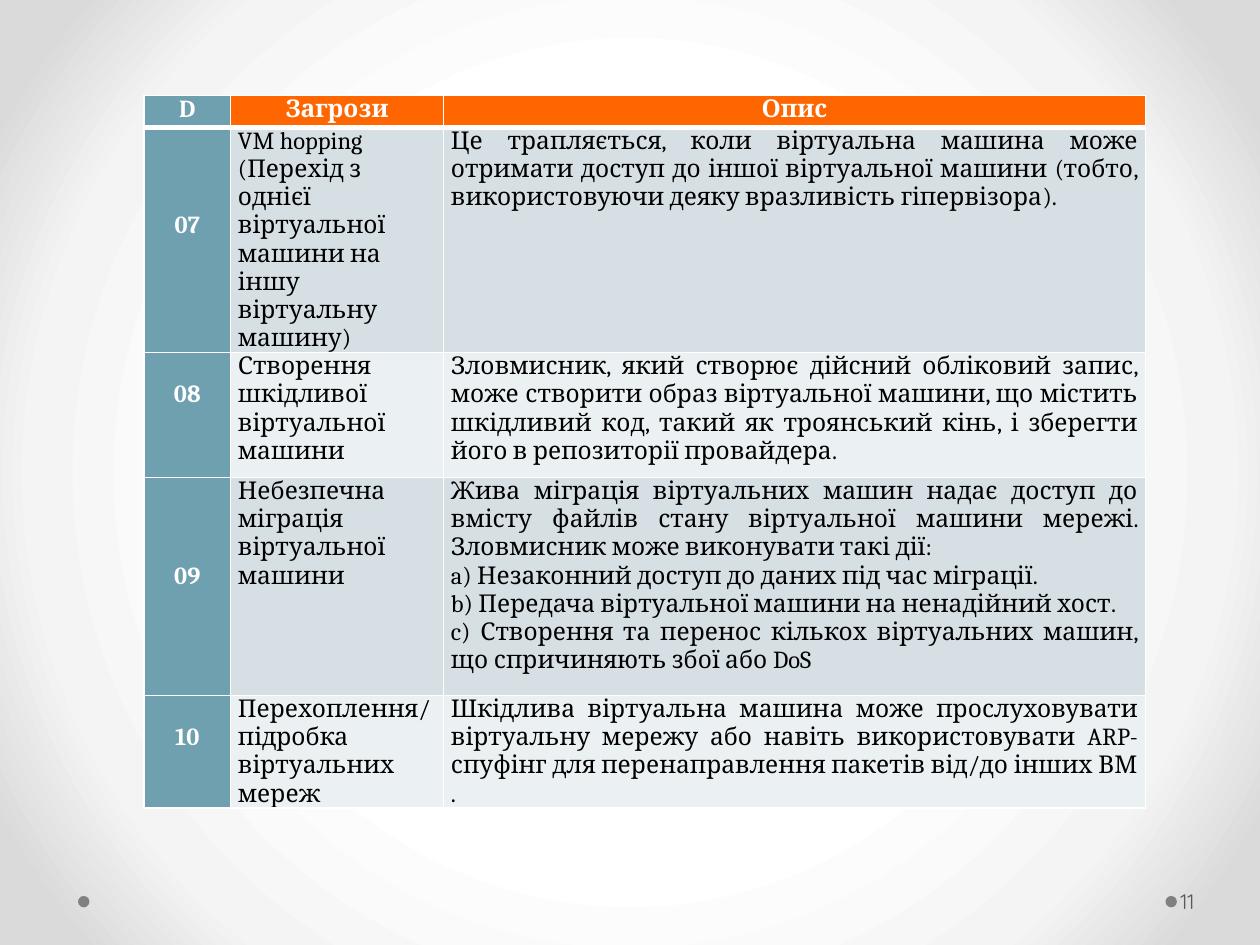
import pptx
import pptx.util
import pptx.dml.color
import pptx.enum.shapes
import pptx.enum.text
import pptx.oxml
import pptx.oxml.ns

Pt = pptx.util.Pt
RGB = pptx.dml.color.RGBColor
ALIGN = pptx.enum.text.PP_ALIGN

WHITE = RGB(0xFF, 0xFF, 0xFF)
BLACK = RGB(0, 0, 0)
TEAL = RGB(0x6E, 0xA0, 0xB0)
ORANGE = RGB(0xFF, 0x66, 0x00)
BAND_DARK = RGB(0xD5, 0xDF, 0xE4)
BAND_LIGHT = RGB(0xEB, 0xF0, 0xF2)
DOT_GREY = RGB(0x80, 0x80, 0x80)
NUMBER_GREY = RGB(0x59, 0x59, 0x59)
BACKGROUND_STOPS = [(50, WHITE), (76, RGB(0xF4, 0xF4, 0xF4)), (92, RGB(0xDA, 0xDA, 0xDA))]

HEADERS = ["D", "Загрози", "Опис"]
# number, lines the number is lowered by, threat, threat alignment, description
THREATS = [
    ("07", 3,
     "VM hopping (Перехід з однієї віртуальної машини на іншу віртуальну машину)", ALIGN.LEFT,
     "Це трапляється, коли віртуальна машина може отримати доступ до іншої віртуальної машини "
     "(тобто, використовуючи деяку вразливість гіпервізора)."),
    ("08", 1,
     "Створення шкідливої\nвіртуальної машини", ALIGN.LEFT,
     "Зловмисник, який створює дійсний обліковий запис, може створити образ віртуальної машини, "
     "що містить шкідливий код, такий як троянський кінь, і зберегти його в репозиторії провайдера."),
    ("09", 3,
     "Небезпечна міграція віртуальної машини", ALIGN.JUSTIFY,
     "Жива міграція віртуальних машин надає доступ до вмісту файлів стану віртуальної машини "
     "мережі. Зловмисник може виконувати такі дії:\n"
     "a) Незаконний доступ до даних під час міграції.\n"
     "b) Передача віртуальної машини на ненадійний хост.\n"
     "c) Створення та перенос кількох віртуальних машин, що спричиняють збої або DoS"),
    ("10", 1,
     "Перехоплення/підробка віртуальних мереж", ALIGN.JUSTIFY,
     "Шкідлива віртуальна машина може прослуховувати віртуальну мережу або навіть "
     "використовувати ARP-спуфінг для перенаправлення пакетів від/до інших ВМ ."),
]
COLUMN_WIDTHS = [49.5, 121.7, 401]
ROW_HEIGHTS = [18, 126, 71.3, 124.6, 62.6]
TABLE_LEFT, TABLE_TOP = 82.3, 54.7
LINE_HEIGHT = 16.1
DOT_SIZE = 6.5
DOT_TOP = 512
DOT_LEFTS = [666, 44.6]


def paint_background(slide):
    """Radial gradient from the centre of the slide outwards."""
    fill = slide.background.fill
    fill.gradient()
    stops = "".join(f'<a:gs pos="{place * 1000}"><a:srgbClr val="{color}"/></a:gs>'
                    for place, color in BACKGROUND_STOPS)
    radial = pptx.oxml.parse_xml(
        f'<a:gradFill {pptx.oxml.ns.nsdecls("a")} rotWithShape="1"><a:gsLst>{stops}</a:gsLst>'
        '<a:path path="circle"><a:fillToRect l="50000" t="50000" r="50000" b="50000"/></a:path>'
        '</a:gradFill>')
    linear = slide._element.find(".//" + pptx.oxml.ns.qn("a:gradFill"))
    linear.getparent().replace(linear, radial)


def set_borders(cell, top, bottom):
    widths = {"lnL": 1, "lnR": 1, "lnT": top, "lnB": bottom}
    properties = cell._tc.get_or_add_tcPr()
    for place, (side, width) in enumerate(widths.items()):
        properties.insert(place, pptx.oxml.parse_xml(
            f'<a:{side} {pptx.oxml.ns.nsdecls("a")} w="{Pt(width)}"><a:solidFill>'
            f'<a:srgbClr val="{WHITE}"/></a:solidFill></a:{side}>'))


def fill_cell(cell, text, fill, color, align, bold=False, lowered=0):
    cell.margin_left = cell.margin_right = Pt(4.2)
    cell.margin_top, cell.margin_bottom = Pt(lowered * LINE_HEIGHT), 0
    cell.fill.solid()
    cell.fill.fore_color.rgb = fill
    cell.text_frame.text = text
    for paragraph in cell.text_frame.paragraphs:
        paragraph.alignment = align
        font = paragraph.runs[0].font
        font.name, font.size, font.bold = "Cambria", Pt(14), bold
        font.color.rgb = color


def add_threat_table(slide):
    table = slide.shapes.add_table(
        len(THREATS) + 1, len(HEADERS), Pt(TABLE_LEFT), Pt(TABLE_TOP),
        Pt(sum(COLUMN_WIDTHS)), Pt(sum(ROW_HEIGHTS))).table
    for column, width in zip(table.columns, COLUMN_WIDTHS):
        column.width = Pt(width)
    for row, height in zip(table.rows, ROW_HEIGHTS):
        row.height = Pt(height)

    for column, header in enumerate(HEADERS):
        fill_cell(table.cell(0, column), header, ORANGE if column else TEAL,
                  WHITE, ALIGN.CENTER, bold=True)
    for row, (number, lowered, threat, align, description) in enumerate(THREATS, 1):
        band = BAND_DARK if row % 2 else BAND_LIGHT
        fill_cell(table.cell(row, 0), number, TEAL, WHITE, ALIGN.CENTER, True, lowered)
        fill_cell(table.cell(row, 1), threat, band, BLACK, align)
        fill_cell(table.cell(row, 2), description, band, BLACK, ALIGN.JUSTIFY)
    for row_index, row in enumerate(table.rows):
        for cell in row.cells:
            set_borders(cell, top=3 if row_index == 1 else 1, bottom=3 if row_index == 0 else 1)


def add_footer(slide):
    for left in DOT_LEFTS:
        dot = slide.shapes.add_shape(pptx.enum.shapes.MSO_SHAPE.OVAL, Pt(left), Pt(DOT_TOP),
                                     Pt(DOT_SIZE), Pt(DOT_SIZE))
        dot.shadow.inherit = False
        dot.fill.solid()
        dot.fill.fore_color.rgb = DOT_GREY
        dot.line.fill.background()
    page_number = slide.shapes.add_textbox(Pt(672.5), Pt(500.4), Pt(44), Pt(28.8)).text_frame
    page_number.word_wrap = True
    page_number.vertical_anchor = pptx.enum.text.MSO_ANCHOR.MIDDLE
    page_number.margin_left = Pt(2)
    page_number.margin_right = Pt(3.6)
    page_number.text = "11"
    font = page_number.paragraphs[0].runs[0].font
    font.name, font.size = "Quicksand", Pt(12)
    font.color.rgb = NUMBER_GREY


def main():
    presentation = pptx.Presentation()
    presentation.slide_width, presentation.slide_height = Pt(720), Pt(540)
    slide = presentation.slides.add_slide(presentation.slide_layouts[6])
    paint_background(slide)
    add_threat_table(slide)
    add_footer(slide)
    presentation.save("out.pptx")


if __name__ == "__main__":
    main()
